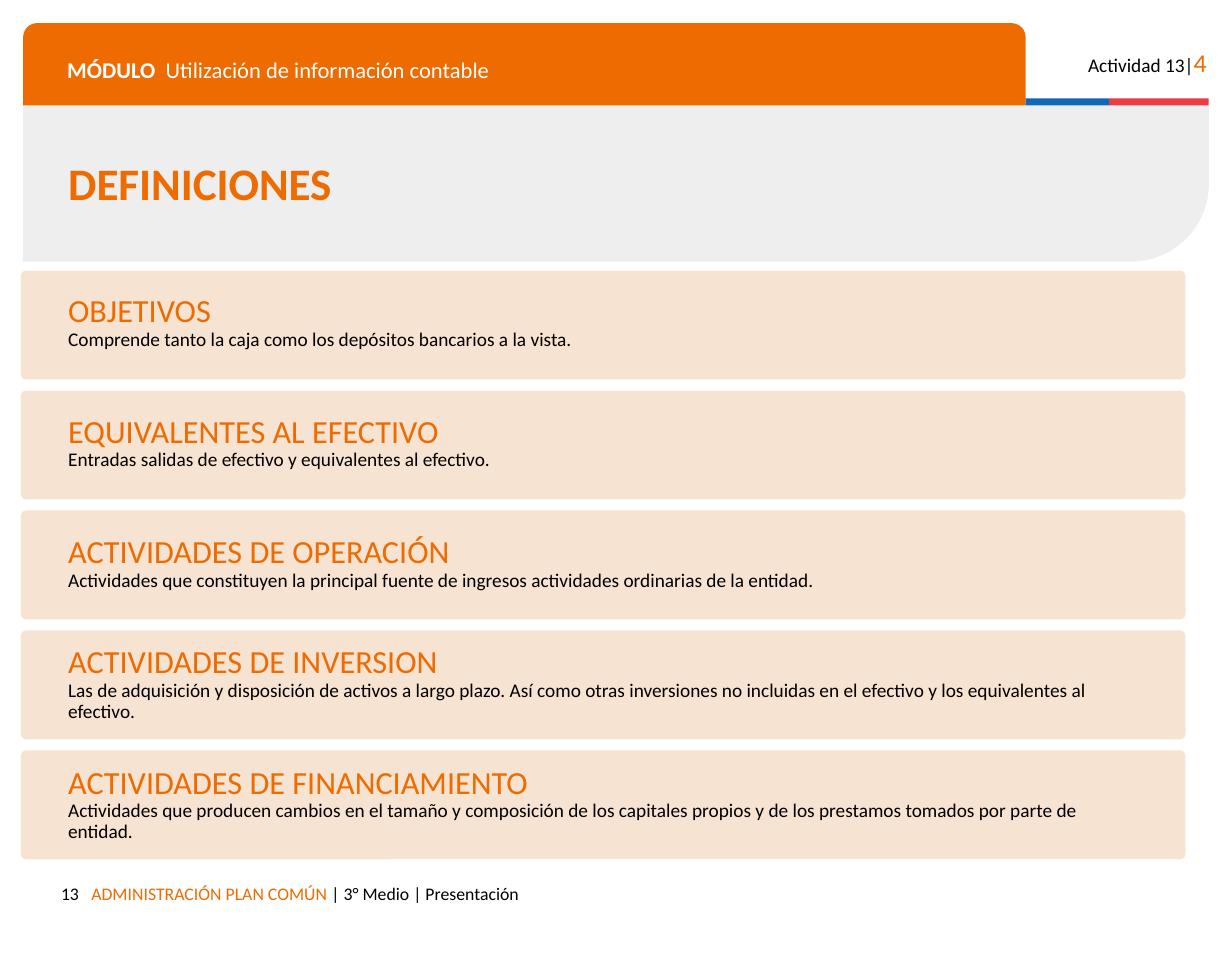
from pptx import Presentation
from pptx.dml.color import RGBColor
from pptx.enum.shapes import MSO_SHAPE
from pptx.enum.text import MSO_ANCHOR, PP_ALIGN
from pptx.util import Inches, Pt

ORANGE = RGBColor(0xED, 0x6B, 0x00)
PEACH = RGBColor(0xF7, 0xE3, 0xD1)
GRAY = RGBColor(0xEE, 0xEE, 0xEE)
BLUE = RGBColor(0x0F, 0x69, 0xB4)
RED = RGBColor(0xEB, 0x3C, 0x46)
BLACK = RGBColor(0, 0, 0)
WHITE = RGBColor(255, 255, 255)

deck = Presentation()
deck.slide_width = Inches(10.63)
deck.slide_height = Inches(8.27)
slide = deck.slides.add_slide(deck.slide_layouts[6])
COL = deck.slide_width / 100
ROW = deck.slide_height / 100


def add_block(kind, left, top, width, height, color, *curves):
    """Add a plain filled shape, placed in percent of the slide."""
    block = slide.shapes.add_shape(
        kind, round(left * COL), round(top * ROW),
        round(width * COL), round(height * ROW))
    block.shadow.inherit = False
    block.fill.solid()
    block.fill.fore_color.rgb = color
    block.line.fill.background()
    for i, curve in enumerate(curves):
        block.adjustments[i] = curve
    return block


def add_text(left, top, width, height, lines, anchor=MSO_ANCHOR.TOP,
             align=PP_ALIGN.LEFT, spacing=None):
    """Add a text box; each line is a list of (text, size, color, bold)."""
    box = slide.shapes.add_textbox(
        round(left * COL), round(top * ROW),
        round(width * COL), round(height * ROW))
    frame = box.text_frame
    frame.word_wrap = True
    frame.vertical_anchor = anchor
    frame.margin_left = frame.margin_right = Inches(0.1)
    frame.margin_top = frame.margin_bottom = Inches(0.1)
    for i, line in enumerate(lines):
        para = frame.add_paragraph() if i else frame.paragraphs[0]
        para.alignment = align
        para.line_spacing = spacing
        for text, size, color, bold in line:
            run = para.add_run()
            run.text = text
            run.font.name = "Calibri"
            run.font.size = Pt(size)
            run.font.color.rgb = color
            run.font.bold = bold


# Header
panel = add_block(MSO_SHAPE.ROUND_1_RECTANGLE,
                  1.88, 11, 96.24, 16.32, GRAY, 0.5)
panel.rotation = 180
panel._element.spPr.xfrm.set("flipH", "1")
add_block(MSO_SHAPE.ROUND_2_SAME_RECTANGLE,
          1.88, 2.42, 81.37, 8.59, ORANGE, 0.17, 0)
add_block(MSO_SHAPE.RECTANGLE, 83.25, 10.28, 6.78, 0.73, BLUE)
add_block(MSO_SHAPE.RECTANGLE, 90.03, 10.28, 8.09, 0.73, RED)
add_text(4.52, 4.59, 76.58, 4.23,
         [[("MÓDULO ", 14, WHITE, True),
           (" Utilización de información contable", 14, WHITE, False)]])
add_text(86.83, 3.63, 12.04, 4.59,
         [[("Actividad 13|", 12, BLACK, False), ("4", 16, ORANGE, False)]],
         align=PP_ALIGN.RIGHT)
add_text(4.61, 17.41, 89.28, 4.23, [[("DEFINICIONES", 28, ORANGE, True)]],
         anchor=MSO_ANCHOR.MIDDLE, spacing=0.8)

# Definition cards
TERMS = [
    ("OBJETIVOS",
     "Comprende tanto la caja como los depósitos bancarios a la vista."),
    ("EQUIVALENTES AL EFECTIVO",
     "Entradas salidas de efectivo y equivalentes al efectivo."),
    ("ACTIVIDADES DE OPERACIÓN",
     "Actividades que constituyen la principal fuente de ingresos "
     "actividades ordinarias de la entidad."),
    ("ACTIVIDADES DE INVERSION",
     "Las de adquisición y disposición de activos a largo plazo. Así como "
     "otras inversiones no incluidas en el efectivo y los equivalentes al "
     "efectivo."),
    ("ACTIVIDADES DE FINANCIAMIENTO",
     "Actividades que producen cambios en el tamaño y composición de los "
     "capitales propios y de los prestamos tomados por parte de entidad."),
]
for i, (term, sense) in enumerate(TERMS):
    add_block(MSO_SHAPE.ROUNDED_RECTANGLE,
              1.69, 28.25 + 12.52 * i, 94.54, 11.37, PEACH, 0.05)
    add_text(4.61, 29.38 + 12.58 * i, 87.68, 8.59,
             [[(term, 20, ORANGE, False)], [(sense, 12, BLACK, False)]],
             anchor=MSO_ANCHOR.MIDDLE, spacing=0.9)

# Footer
add_text(1.88, 91.05, 5.46, 3.51, [[("13", 11, BLACK, False)]],
         align=PP_ALIGN.RIGHT)
add_text(6.49, 91.05, 67.17, 4.59,
         [[("ADMINISTRACIÓN PLAN COMÚN ", 11, ORANGE, False),
           ("| 3° Medio | Presentación", 11, BLACK, False)]])

deck.save("out.pptx")
